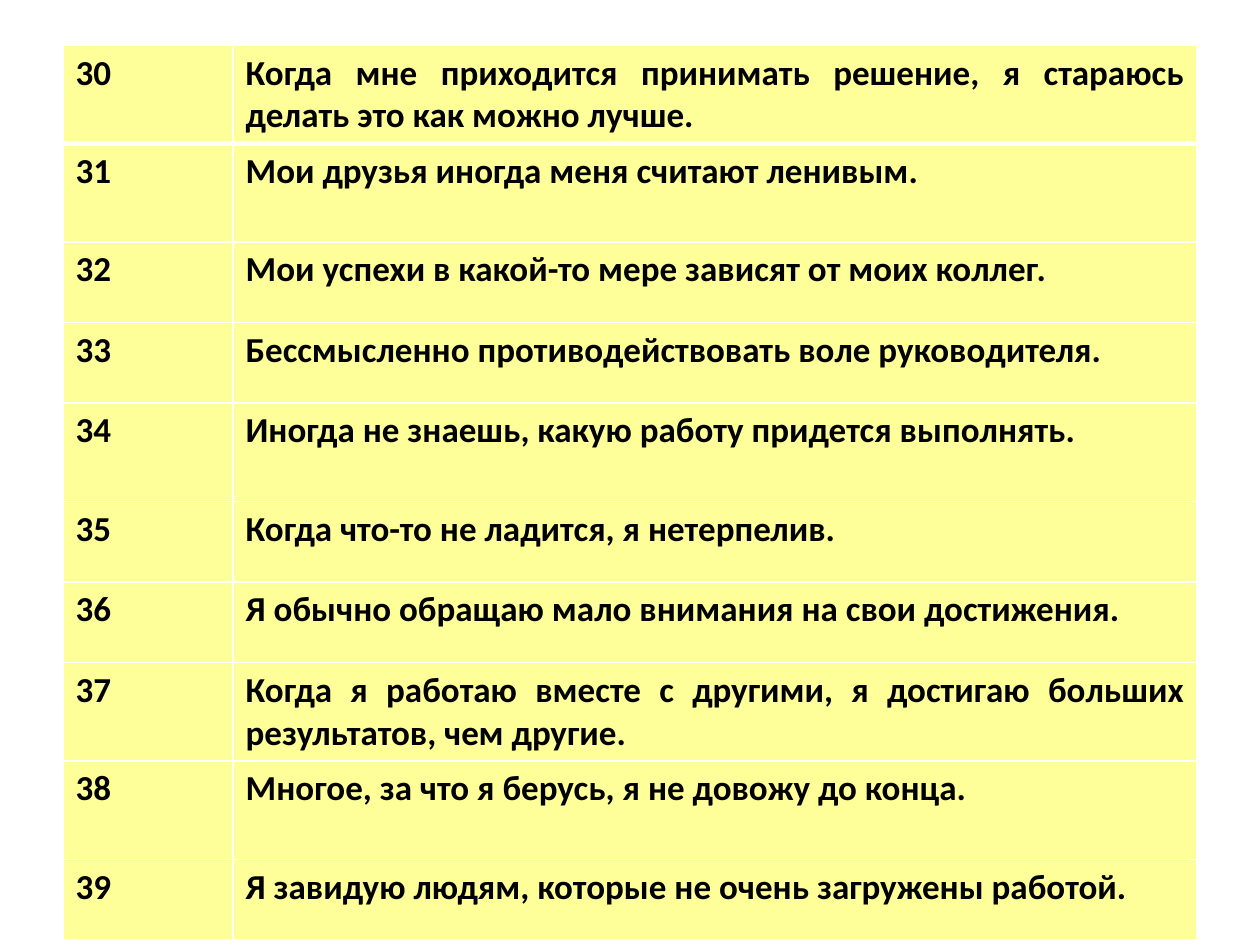
"""Build a slide with questionnaire statements 30 to 39 in a table."""
import pptx
import pptx.dml.color
import pptx.enum.text
import pptx.oxml
import pptx.oxml.ns
import pptx.util
from pptx.util import Inches

COLORS = {"cell": "FFFF99", "border": "FFFFFF", "text": "000000"}
FIRST_NUMBER = 30
TALL, SHORT = 0.78, 0.64
COLUMN_WIDTHS = (1.35, 7.65)
LEFT, TOP = 0.5, 0.36
STATEMENTS = [
    ("Когда мне приходится принимать решение, я стараюсь делать это как можно лучше.", TALL),
    ("Мои друзья иногда меня считают ленивым.", TALL),
    ("Мои успехи в какой-то мере зависят от моих коллег.", SHORT),
    ("Бессмысленно противодействовать воле руководителя.", SHORT),
    ("Иногда не знаешь, какую работу придется выполнять.", TALL),
    ("Когда что-то не ладится, я нетерпелив.", SHORT),
    ("Я обычно обращаю мало внимания на свои достижения.", SHORT),
    ("Когда я работаю вместе с другими, я достигаю больших результатов, чем другие.", TALL),
    ("Многое, за что я берусь, я не довожу до конца.", TALL),
    ("Я завидую людям, которые не очень загружены работой.", SHORT),
]


def rgb(name):
    return pptx.dml.color.RGBColor.from_string(COLORS[name])


def set_borders(cell, widths):
    tc_pr = cell._tc.get_or_add_tcPr()
    for side, width in zip("LRTB", widths):
        tc_pr.append(pptx.oxml.parse_xml(
            f'<a:ln{side} {pptx.oxml.ns.nsdecls("a")} w="{pptx.util.Pt(width)}">'
            f'<a:solidFill><a:srgbClr val="{COLORS["border"]}"/></a:solidFill></a:ln{side}>'))


def fill_cell(cell, text, borders):
    set_borders(cell, borders)
    cell.fill.solid()
    cell.fill.fore_color.rgb = rgb("cell")
    p = cell.text_frame.paragraphs[0]
    p.text = text
    p.alignment = pptx.enum.text.PP_ALIGN.JUSTIFY
    font = p.runs[0].font
    font.name, font.size, font.bold = "Calibri", pptx.util.Pt(20), True
    font.color.rgb = rgb("text")


def main():
    prs = pptx.Presentation()
    prs.slide_width, prs.slide_height = Inches(10), Inches(7.5)
    s = prs.slides.add_slide(prs.slide_layouts[6])
    height = sum(h for _, h in STATEMENTS)
    table = s.shapes.add_table(
        len(STATEMENTS), len(COLUMN_WIDTHS), Inches(LEFT), Inches(TOP),
        Inches(sum(COLUMN_WIDTHS)), Inches(height)).table
    table.first_row = table.horz_banding = False
    for column, width in zip(table.columns, COLUMN_WIDTHS):
        column.width = Inches(width)
    for i, (statement, row_height) in enumerate(STATEMENTS):
        table.rows[i].height = Inches(row_height)
        borders = (1, 1, 3 if i == 1 else 1, 3 if i == 0 else 1)
        for j, text in enumerate((str(FIRST_NUMBER + i), statement)):
            fill_cell(table.cell(i, j), text, borders)
    prs.save("out.pptx")


if __name__ == "__main__":
    main()
